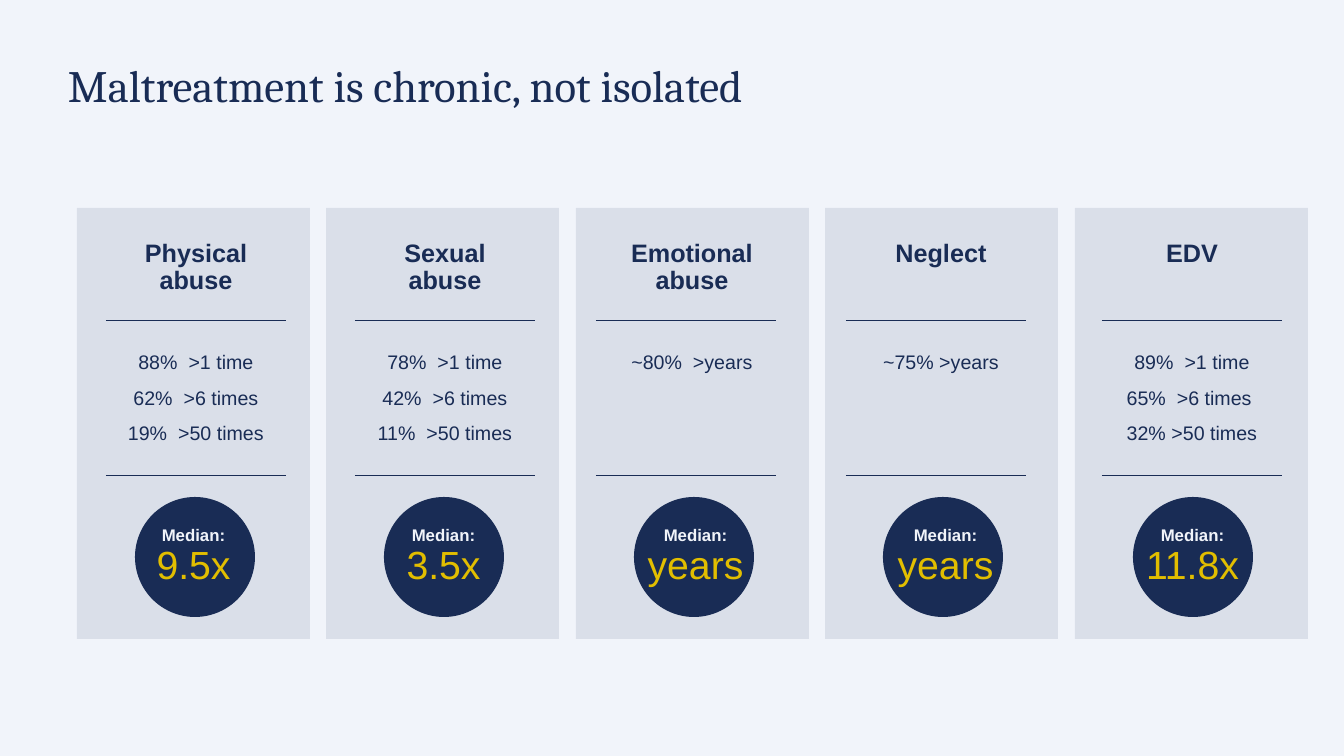
"""Build the slide on how chronic each kind of maltreatment is."""
from copy import deepcopy

from lxml import etree
from pptx import Presentation
from pptx.dml.color import RGBColor
from pptx.enum.shapes import MSO_CONNECTOR, MSO_SHAPE
from pptx.enum.text import MSO_ANCHOR, PP_ALIGN
from pptx.oxml.ns import qn
from pptx.util import Pt

RECTANGLE, OVAL = MSO_SHAPE.RECTANGLE, MSO_SHAPE.OVAL
STRAIGHT = MSO_CONNECTOR.STRAIGHT
TOP = MSO_ANCHOR.TOP
LEFT, CENTER = PP_ALIGN.LEFT, PP_ALIGN.CENTER

EMU_PER_PX = 914400 / 100.8
COLORS = {"navy": "192C55", "pale": "F1F4FA", "gold": "E2BE00"}
TITLE_FONT, BODY_FONT = "Cambria", "Arial"

CARD_LEFT, CARD_TOP, CARD_WIDTH, CARD_HEIGHT = 77, 208, 233, 431
FIVE_CARDS_SPAN = 998
COLUMN_WIDTH = 180
CIRCLE_INSET, CIRCLE_TOP, CIRCLE_SIZE = 58, 497, 120
RULE_TOPS = (320, 475)

# heading lines, frequencies, median, insets of text, rules and median
CARDS = [
    (["Physical", "abuse"], ["88%  >1 time", "62%  >6 times", "19%  >50 times"], "9.5x", 29, 29, 57),
    (["Sexual", "abuse"], ["78%  >1 time", "42%  >6 times", "11%  >50 times"], "3.5x", 29, 29, 58),
    (["Emotional", "abuse"], ["~80%  >years"], "years", 26, 20, 60),
    (["Neglect"], ["~75% >years"], "years", 26, 21, 61),
    (["EDV"], ["89%  >1 time", "65%  >6 times ", "32% >50 times"], "11.8x", 27, 27, 58),
]


def px(*lengths):
    return [round(length * EMU_PER_PX) for length in lengths]


def rgb(color):
    return RGBColor.from_string(COLORS[color])


def add_run(paragraph, text, size, color, bold=False, font=BODY_FONT):
    run = paragraph.add_run()
    run.text = text
    run.font.size = Pt(size)
    run.font.name = font
    run.font.bold = bold
    run.font.color.rgb = rgb(color)
    return run


def add_break(paragraph, run):
    paragraph.add_line_break()
    paragraph._p[-1].append(deepcopy(run._r.rPr))


def prepare_frame(frame):
    frame.word_wrap = True
    frame.vertical_anchor = TOP
    frame.margin_left = frame.margin_right = frame.margin_top = frame.margin_bottom = 0


def add_text(slide, box, paragraphs):
    """Each paragraph is a list of lines, and each line holds text, size, color and bold."""
    frame = slide.shapes.add_textbox(*px(*box)).text_frame
    prepare_frame(frame)
    for index, lines in enumerate(paragraphs):
        paragraph = frame.add_paragraph() if index else frame.paragraphs[0]
        paragraph.alignment = CENTER
        paragraph.line_spacing = 0.9
        paragraph.space_before = Pt(4 if index else 0)
        paragraph.space_after = Pt(6)
        run = None
        for line in lines:
            if run is not None:
                add_break(paragraph, run)
            run = add_run(paragraph, *line)


def add_filled(slide, preset, box, alpha=100):
    shape = slide.shapes.add_shape(preset, *px(*box))
    shape.shadow.inherit = False
    shape.line.fill.background()
    shape.fill.solid()
    shape.fill.fore_color.rgb = rgb("navy")
    if alpha < 100:
        color = shape._element.spPr.find(".//" + qn("a:srgbClr"))
        etree.SubElement(color, qn("a:alpha")).set("val", str(alpha * 1000))


def add_rule(slide, left, top):
    rule = slide.shapes.add_connector(STRAIGHT, *px(left, top, left + COLUMN_WIDTH, top))
    rule.line.color.rgb = rgb("navy")
    rule.line.width = Pt(0.5)
    etree.SubElement(rule._element.spPr, qn("a:effectLst"))


def add_title(slide, text):
    title = slide.shapes.title
    title.left, title.top, title.width, title.height = px(68, 58, 1047, 86)
    prepare_frame(title.text_frame)
    paragraph = title.text_frame.paragraphs[0]
    paragraph.alignment = LEFT
    add_run(paragraph, text, 32, "navy", font=TITLE_FONT)


def add_card(slide, left, heading, frequencies, median, text_inset, rule_inset, median_inset):
    add_filled(slide, RECTANGLE, (left, CARD_TOP, CARD_WIDTH, CARD_HEIGHT), alpha=10)
    add_filled(slide, OVAL, (left + CIRCLE_INSET, CIRCLE_TOP, CIRCLE_SIZE, CIRCLE_SIZE))
    for top in RULE_TOPS:
        add_rule(slide, left + rule_inset, top)
    text_left = left + text_inset
    add_text(slide, (text_left, 241, COLUMN_WIDTH, 52),
             [[(line, 18, "navy", True) for line in heading]])
    add_text(slide, (text_left, 353, COLUMN_WIDTH, 90),
             [[(frequency, 14, "navy")] for frequency in frequencies])
    add_text(slide, (left + median_inset, 527, 119, 60),
             [[("Median:", 12, "pale", True), (median, 28, "gold")]])


def main():
    presentation = Presentation()
    presentation.slide_width, presentation.slide_height = px(1344, 756)
    slide = presentation.slides.add_slide(presentation.slide_layouts[5])
    slide.background.fill.solid()
    slide.background.fill.fore_color.rgb = rgb("pale")
    add_title(slide, "Maltreatment is chronic, not isolated")
    for index, card in enumerate(CARDS):
        add_card(slide, CARD_LEFT + index * FIVE_CARDS_SPAN // 4, *card)
    presentation.save("out.pptx")


if __name__ == "__main__":
    main()
